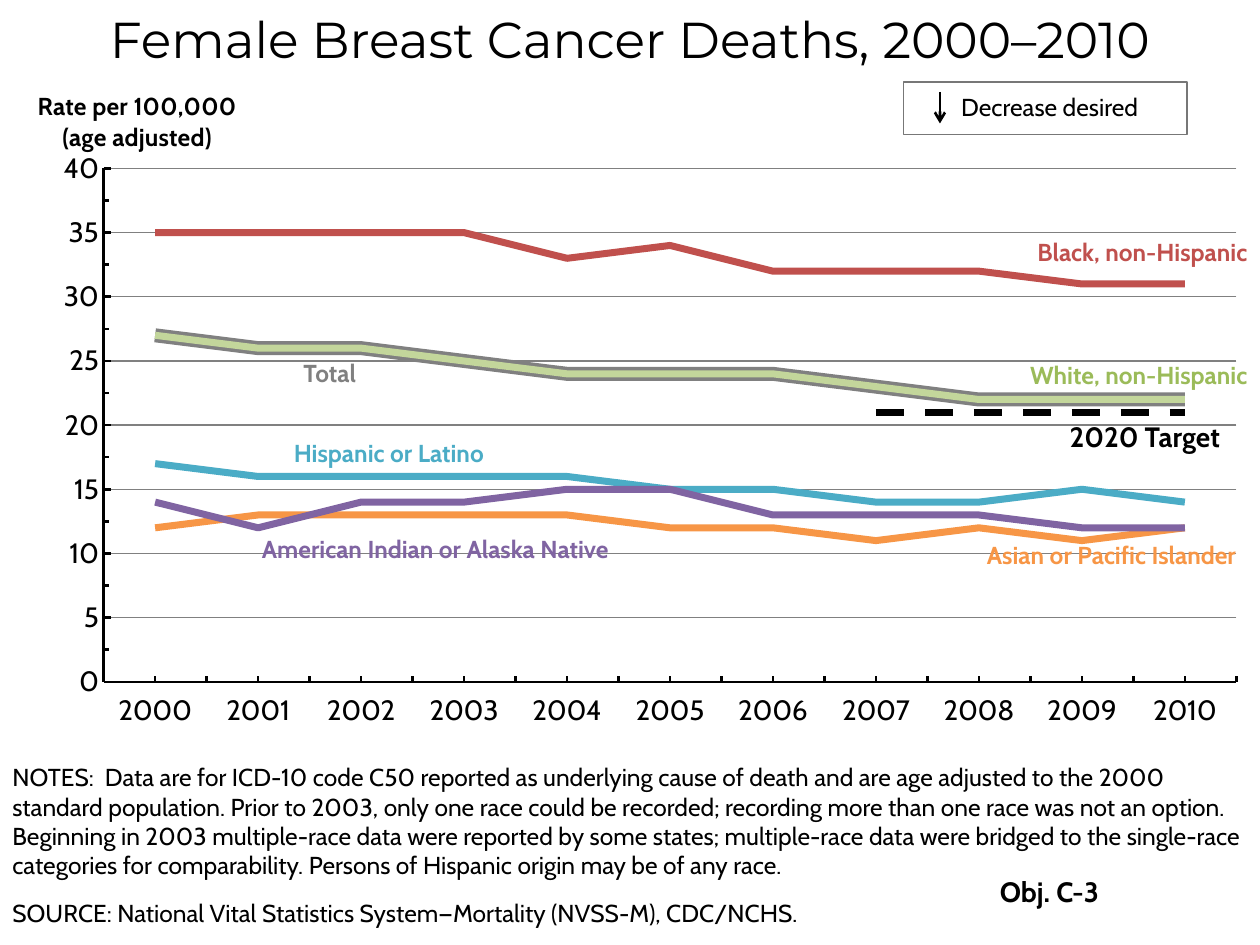
from lxml import etree
from pptx import Presentation
from pptx.chart.data import CategoryChartData
from pptx.dml.color import RGBColor
from pptx.enum.chart import XL_CHART_TYPE, XL_TICK_LABEL_POSITION, XL_TICK_MARK
from pptx.enum.dml import MSO_LINE
from pptx.enum.shapes import MSO_CONNECTOR, MSO_SHAPE
from pptx.enum.text import MSO_ANCHOR, PP_ALIGN
from pptx.oxml import parse_xml
from pptx.oxml.ns import nsdecls, qn
from pptx.util import Inches, Pt

LEFT, CENTER, RIGHT = PP_ALIGN.LEFT, PP_ALIGN.CENTER, PP_ALIGN.RIGHT
TOP, MIDDLE = MSO_ANCHOR.TOP, MSO_ANCHOR.MIDDLE
TICK_NONE, TICK_INSIDE = XL_TICK_MARK.NONE, XL_TICK_MARK.INSIDE
BLACK, GRAY, GREEN, LIGHT_GREEN = "000000", "808080", "9BBB59", "C3D69B"
TEAL, RED, ORANGE, PURPLE = "4BACC6", "C0504D", "F79646", "8064A2"

YEARS = [str(year) for year in range(2000, 2011)]
TOTAL_RATES = [27, 26, 26, 25, 24, 24, 24, 23, 22, 22, 22]
# Name, values, colour, line width
SERIES = [
    ("Total", TOTAL_RATES, GRAY, 8),
    ("White, non-Hispanic", TOTAL_RATES, LIGHT_GREEN, 4),
    ("Hispanic or Latino", [17, 16, 16, 16, 16, 15, 15, 14, 14, 15, 14], TEAL, 4),
    ("Black, non-Hispanic", [35, 35, 35, 35, 33, 34, 32, 32, 32, 31, 31], RED, 4),
    ("Asian or Pacific Islander", [12, 13, 13, 13, 13, 12, 12, 11, 12, 11, 12], ORANGE, 4),
    ("American Indian or Alaska Native", [14, 12, 14, 14, 15, 15, 13, 13, 13, 12, 12], PURPLE, 4),
    ("2020 Target", [None] * 7 + [21] * 4, BLACK, 4),
]
# Text, box, colour, alignment, size
SERIES_LABELS = [
    ("Black, non-Hispanic", (7.8, 1.83, 2.2, 0.34), RED, RIGHT, 14),
    ("Total", (2.31, 2.79, 1.35, 0.25), GRAY, LEFT, 14),
    ("White, non-Hispanic", (7.41, 2.81, 2.59, 0.36), GREEN, RIGHT, 14),
    ("Hispanic or Latino", (1.92, 3.43, 2.02, 0.23), TEAL, RIGHT, 14),
    ("Asian or Pacific Islander", (7.08, 4.24, 2.83, 0.4), ORANGE, RIGHT, 14),
    ("American Indian or Alaska Native", (1.98, 4.19, 3.6, 0.47), PURPLE, LEFT, 14),
    ("2020 Target", (8.39, 3.28, 1.61, 0.38), BLACK, LEFT, 16),
]
NOTES = (
    "NOTES:  Data are for ICD-10 code C50 reported as underlying cause of death and are "
    "age adjusted to the 2000 standard population. Prior to 2003, only one race could be "
    "recorded; recording more than one race was not an option. Beginning in 2003 "
    "multiple-race data were reported by some states; multiple-race data were bridged to "
    "the single-race categories for comparability. Persons of Hispanic origin may be of "
    "any race."
)
SOURCE = "SOURCE: National Vital Statistics System—Mortality (NVSS-M), CDC/NCHS."


def color(value):
    return RGBColor.from_string(value)


def set_attributes(target, values):
    for name, value in values.items():
        setattr(target, name, value)


def manual_layout(x, y, width=None, height=None):
    parts = {"xMode": "edge", "yMode": "edge", "x": x, "y": y}
    if width is not None:
        parts = {"layoutTarget": "inner", **parts, "w": width, "h": height}
    layout = parse_xml(f"<c:layout {nsdecls('c')}><c:manualLayout/></c:layout>")
    for name, value in parts.items():
        etree.SubElement(layout[0], qn(f"c:{name}")).set("val", str(value))
    return layout


class SlideBuilder:
    font = "Cabin"

    def __init__(self, slide):
        self.slide = slide
        self.shapes = slide.shapes

    def style_font(self, font, size, hex_color=BLACK, bold=False, name=None):
        set_attributes(font, {"name": name or self.font, "size": Pt(size), "bold": bold})
        font.color.rgb = color(hex_color)

    def style_line(self, line, hex_color, width):
        line.color.rgb = color(hex_color)
        line.width = Pt(width)

    def start_group(self):
        self.shapes = self.slide.shapes.add_group_shape().shapes

    def end_group(self):
        self.shapes = self.slide.shapes

    def text(self, content, box, size=14, hex_color=BLACK, bold=False, align=LEFT,
             anchor=TOP, name=None, before=0.2, spacing=None):
        shape = self.shapes.add_textbox(*map(Inches, box))
        set_attributes(shape.text_frame, {"word_wrap": True, "vertical_anchor": anchor})
        paragraph = shape.text_frame.paragraphs[0]
        set_attributes(paragraph, {"alignment": align, "space_before": Pt(size * before),
                                   "line_spacing": spacing})
        run = paragraph.add_run()
        run.text = content
        self.style_font(run.font, size, hex_color, bold, name)

    def frame(self, box, hex_color, width):
        shape = self.shapes.add_shape(MSO_SHAPE.RECTANGLE, *map(Inches, box))
        shape.shadow.inherit = False
        shape.fill.background()
        self.style_line(shape.line, hex_color, width)

    def arrow(self, points, hex_color, width):
        connector = self.shapes.add_connector(MSO_CONNECTOR.STRAIGHT, *map(Inches, points))
        self.style_line(connector.line, hex_color, width)
        properties = connector._element.spPr
        etree.SubElement(properties.find(qn("a:ln")), qn("a:tailEnd")).set("type", "arrow")
        etree.SubElement(properties, qn("a:effectLst"))

    def axis(self, axis, values):
        set_attributes(axis, values)
        self.style_line(axis.format.line, BLACK, 1.5)
        self.style_font(axis.tick_labels.font, 16)

    def axis_title(self, axis, lines, x, y):
        frame = axis.axis_title.text_frame
        frame.text = "\n".join(lines)
        for paragraph in frame.paragraphs:
            paragraph.alignment = CENTER
            self.style_font(paragraph.runs[0].font, 14, bold=True)
        body = frame._txBody.find(qn("a:bodyPr"))
        body.set("rot", "0")
        body.set("vert", "horz")
        title = axis.axis_title._element
        for old_layout in title.findall(qn("c:layout")):
            title.remove(old_layout)
        title.find(qn("c:tx")).addnext(manual_layout(x, y))

    def line_chart(self, box, plot_box):
        data = CategoryChartData(number_format="0")
        data.categories = YEARS
        for name, values, *_ in SERIES:
            data.add_series(name, values)
        chart = self.shapes.add_chart(XL_CHART_TYPE.LINE, *map(Inches, box), data).chart
        set_attributes(chart, {"has_legend": False, "has_title": False})
        self.style_font(chart.font, 18, name="Calibri")
        for series, (_, _, hex_color, width) in zip(chart.plots[0].series, SERIES):
            series.smooth = False
            self.style_line(series.format.line, hex_color, width)
        chart.plots[0].vary_by_categories = False
        series.format.line.dash_style = MSO_LINE.DASH

        self.axis(chart.category_axis, {
            "major_tick_mark": TICK_NONE, "minor_tick_mark": TICK_INSIDE,
            "tick_label_position": XL_TICK_LABEL_POSITION.LOW})
        value_axis = chart.value_axis
        self.axis(value_axis, {
            "minimum_scale": 0, "maximum_scale": 40, "major_unit": 5, "minor_unit": 2.5,
            "major_tick_mark": TICK_INSIDE, "minor_tick_mark": TICK_INSIDE,
            "has_major_gridlines": True})
        set_attributes(value_axis.tick_labels,
                       {"number_format": "0", "number_format_is_linked": False})
        self.style_line(value_axis.major_gridlines.format.line, GRAY, 0.75)
        self.axis_title(value_axis, ["Rate per 100,000", "(age adjusted)"], 0.01, 0.01)

        plot_area = chart._chartSpace.chart.plotArea
        for old_layout in plot_area.findall(qn("c:layout")):
            plot_area.remove(old_layout)
        plot_area.insert(0, manual_layout(*plot_box))


def main():
    presentation = Presentation()
    set_attributes(presentation, {"slide_width": Inches(10), "slide_height": Inches(7.5)})
    builder = SlideBuilder(presentation.slides.add_slide(presentation.slide_layouts[6]))

    # Title and chart
    builder.text("Female Breast Cancer Deaths, 2000–2010", (0, 0, 10, 0.61), 28.8,
                 align=CENTER, anchor=MIDDLE, name="Montserrat", before=0)
    builder.line_chart((0.17, 0.63, 9.74, 5.32), (0.067, 0.133, 0.923, 0.766))

    # Key to the desired direction
    builder.start_group()
    builder.text("Decrease desired", (7.53, 0.76, 1.88, 0.25), before=0.25, spacing=0.6)
    builder.frame((7.17, 0.65, 2.25, 0.42), "777777", 0.75)
    builder.arrow((7.46, 0.73, 7.46, 0.98), BLACK, 1.5)
    builder.end_group()

    # Labels beside the lines
    for content, box, hex_color, align, size in SERIES_LABELS:
        builder.text(content, box, size, hex_color, bold=True, align=align)

    # Notes, source and objective
    builder.text(NOTES, (0, 6, 10, 0.92))
    builder.text(SOURCE, (0, 7.08, 6.96, 0.43))
    builder.text("Obj. C-3", (6.97, 6.89, 1.85, 0.61), 16, bold=True, align=RIGHT)

    presentation.save("out.pptx")


if __name__ == "__main__":
    main()
